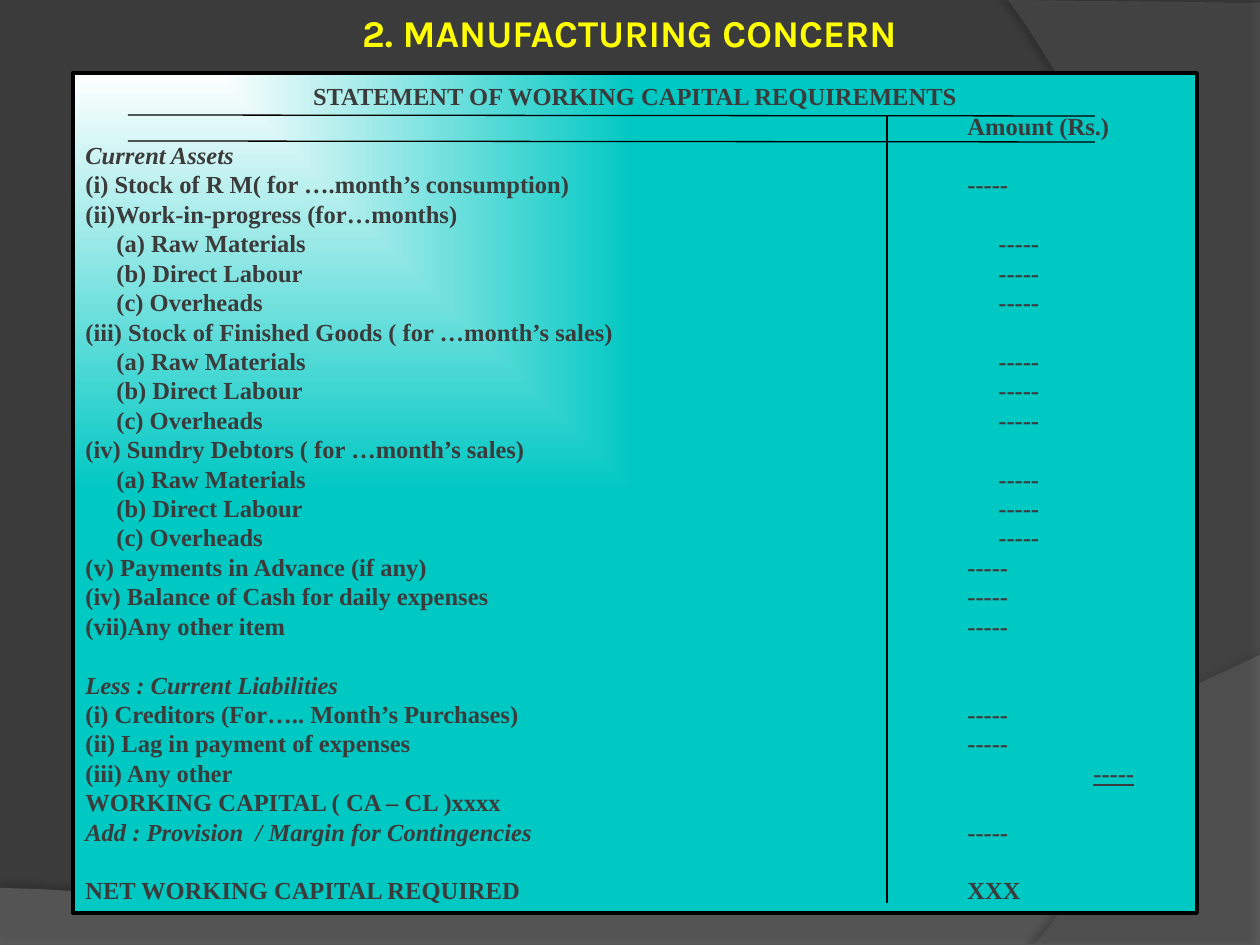
import lxml.etree
import pptx
import pptx.util
import pptx.dml.color
import pptx.enum.shapes
import pptx.enum.text
import pptx.oxml
import pptx.oxml.ns

EMU_PER_PX = 914400 / 126
THEME = {
    "back": "3B3B3B", "title": "FFFF00", "ink": "3B3B3B", "line": "000000",
    "panel_start": "FFFFFF", "panel_end": "00C8C3",
    "title_font": "Karla", "body_font": "Times New Roman",
    "title_size": 21.6, "body_size": 14, "body_pitch": 16.8,
}
AMOUNT_TAB, LATE_TAB, SUB_INDENT = 882, 1008, 31
A = pptx.oxml.ns.nsdecls("a")
Pt = pptx.util.Pt
rgb = pptx.dml.color.RGBColor.from_string


def px(value):
    return pptx.util.Emu(round(value * EMU_PER_PX))


def bezier(start, first, second, end, steps=40):
    """Points along a cubic curve, without its start."""
    points = []
    for step in range(1, steps + 1):
        t = step / steps
        weights = ((1 - t) ** 3, 3 * t * (1 - t) ** 2, 3 * t * t * (1 - t), t ** 3)
        points.append(tuple(
            sum(w * p[axis] for w, p in zip(weights, (start, first, second, end)))
            for axis in (0, 1)))
    return points


deck = pptx.Presentation()
deck.slide_width, deck.slide_height = px(1260), px(945)
page = deck.slides.add_slide(deck.slide_layouts[6])
page.background.fill.solid()
page.background.fill.fore_color.rgb = rgb(THEME["back"])

# Background waves: straight corners, curve, colour, opacity, shadow
waves = [
    ([(0, 888), (0, 946), (1260, 946), (1260, 655)],
     [(704, 919), (493, 906), (0, 888)], "7F7F7F", 45, (35, 4, 3.5, 270)),
    ([(1260, 3), (1260, 945), (1034, 945)],
     [(1178, 780), (1283, 378), (1008, 0)], "5E5E5E", 40, (45, 4, 4, 180)),
]
for corners, curve, color, opacity, (shade, blur, distance, angle) in waves:
    builder = page.shapes.build_freeform(*corners[0], scale=EMU_PER_PX)
    builder.add_line_segments(corners[1:] + bezier(corners[-1], *curve), close=True)
    wave = builder.convert_to_shape()
    wave.fill.solid()
    wave.fill.fore_color.rgb = rgb(color)
    fill_color = wave._element.spPr.find(".//" + pptx.oxml.ns.qn("a:srgbClr"))
    lxml.etree.SubElement(fill_color, pptx.oxml.ns.qn("a:alpha"), val=str(opacity * 1000))
    wave.line.fill.background()
    wave.shadow.inherit = False
    wave._element.spPr.find(pptx.oxml.ns.qn("a:effectLst")).append(pptx.oxml.parse_xml(
        f'<a:outerShdw {A} blurRad="{Pt(blur)}" dist="{Pt(distance)}" dir="{angle * 60000}">'
        f'<a:srgbClr val="000000"><a:alpha val="{shade * 1000}"/></a:srgbClr></a:outerShdw>'))

# Title, raised by the bottom inset
title = page.shapes.add_textbox(px(94), px(21), px(1071), px(63))
frame = title.text_frame
frame.word_wrap = True
frame.vertical_anchor = pptx.enum.text.MSO_ANCHOR.MIDDLE
frame.margin_top, frame.margin_bottom = 0, px(41)
frame.text = "2. MANUFACTURING CONCERN"
para = frame.paragraphs[0]
para.alignment = pptx.enum.text.PP_ALIGN.CENTER
para.font.name, para.font.size = THEME["title_font"], Pt(THEME["title_size"])
para.font.bold = True
para.font.color.rgb = rgb(THEME["title"])

# Statement panel
panel = page.shapes.add_shape(
    pptx.enum.shapes.MSO_SHAPE.RECTANGLE, px(73), px(73), px(1124), px(840))
panel.shadow.inherit = False
panel.fill.background()
properties = panel._element.spPr
properties.replace(properties.find(pptx.oxml.ns.qn("a:noFill")), pptx.oxml.parse_xml(
    f'<a:gradFill {A} rotWithShape="1"><a:gsLst>'
    f'<a:gs pos="0"><a:srgbClr val="{THEME["panel_start"]}"/></a:gs>'
    f'<a:gs pos="100000"><a:srgbClr val="{THEME["panel_end"]}"/></a:gs></a:gsLst>'
    '<a:path path="rect"><a:fillToRect r="100000" b="100000"/></a:path></a:gradFill>'))
panel.line.color.rgb = rgb(THEME["line"])
panel.line.width = Pt(2.25)

# Each row: label, amount, style flags (c centre, i italic, s sub-item, g gap above, u late underlined)
DASHES = "-----"
costs = [(f"({letter}) {name}", DASHES, "s") for letter, name in
         zip("abc", ("Raw Materials", "Direct Labour", "Overheads"))]
rows = [
    ("STATEMENT OF WORKING CAPITAL REQUIREMENTS", "", "c"),
    ("", "Amount (Rs.)", ""),
    ("Current Assets", "", "i"),
    ("(i) Stock of R M( for ….month’s consumption)", DASHES, ""),
    ("(ii)Work-in-progress (for…months)", "", ""), *costs,
    ("(iii) Stock of Finished Goods ( for …month’s sales)", "", ""), *costs,
    ("(iv) Sundry Debtors ( for …month’s sales)", "", ""), *costs,
    ("(v) Payments in Advance (if any)", DASHES, ""),
    ("(iv) Balance of Cash for daily expenses", DASHES, ""),
    ("(vii)Any other item", DASHES, ""),
    ("Less : Current Liabilities", "", "ig"),
    ("(i) Creditors (For….. Month’s Purchases)", DASHES, ""),
    ("(ii) Lag in payment of expenses", DASHES, ""),
    ("(iii) Any other", DASHES, "u"),
    ("WORKING CAPITAL ( CA – CL )xxxx", "", ""),
    ("Add : Provision  / Margin for Contingencies", DASHES, "i"),
    ("NET WORKING CAPITAL REQUIRED", "XXX", "g"),
]
frame = panel.text_frame
frame.word_wrap = True
frame.vertical_anchor = pptx.enum.text.MSO_ANCHOR.MIDDLE
for index, (label, amount, flags) in enumerate(rows):
    para = frame.add_paragraph() if index else frame.paragraphs[0]
    align = pptx.enum.text.PP_ALIGN
    para.alignment = align.CENTER if "c" in flags else align.LEFT
    para.line_spacing = Pt(THEME["body_pitch"])
    para.space_before = Pt(THEME["body_pitch"] if "g" in flags else 0)
    settings = para._p.get_or_add_pPr()
    if "s" in flags:
        settings.set("marL", str(px(SUB_INDENT)))
    if amount:
        stop = px(LATE_TAB if "u" in flags else AMOUNT_TAB)
        settings.append(pptx.oxml.parse_xml(
            f'<a:tabLst {A}><a:tab pos="{stop}" algn="l"/></a:tabLst>'))
    for text in (label, "\t" if amount else "", amount):
        if not text:
            continue
        span = para.add_run()
        span.text = text
        span.font.name, span.font.size = THEME["body_font"], Pt(THEME["body_size"])
        span.font.bold = True
        span.font.italic = "i" in flags and text == label
        span.font.underline = "u" in flags and text == amount
        span.font.color.rgb = rgb(THEME["ink"])

# Heading rules and the amount column divider
for x1, y1, x2, y2 in [(128, 115, 1095, 116), (128, 141, 1095, 142), (887, 116, 887, 903)]:
    rule = page.shapes.add_connector(
        pptx.enum.shapes.MSO_CONNECTOR.STRAIGHT, px(x1), px(y1), px(x2), px(y2))
    rule.line.color.rgb = rgb(THEME["line"])
    rule.line.width = Pt(0.75)
    lxml.etree.SubElement(rule._element.spPr, pptx.oxml.ns.qn("a:effectLst"))

deck.save("out.pptx")
